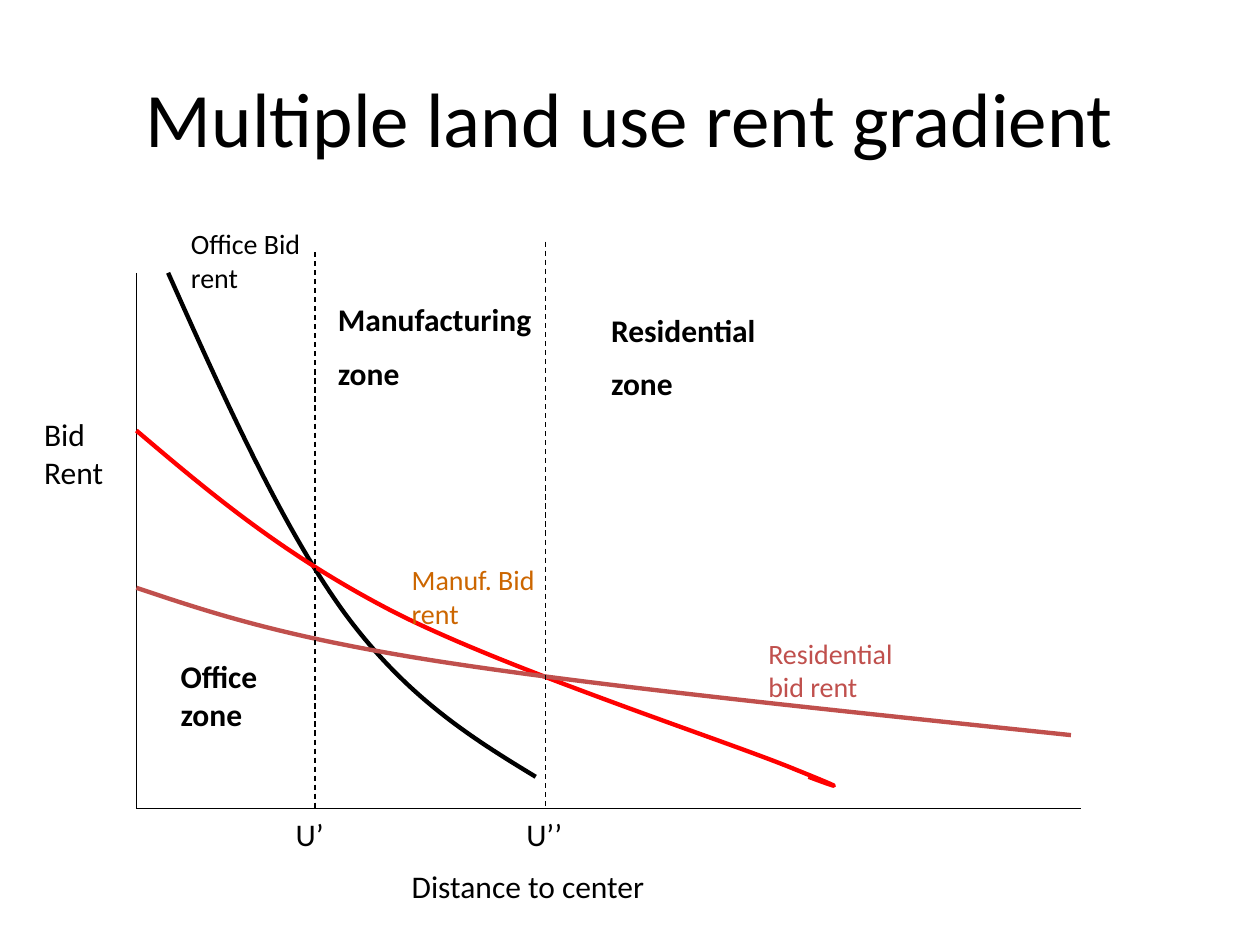
from dataclasses import dataclass

from lxml import etree
from pptx import Presentation
from pptx.dml.color import RGBColor as RGB
from pptx.enum.dml import MSO_LINE_DASH_STYLE as Dash
from pptx.enum.shapes import MSO_CONNECTOR as Connector
from pptx.enum.text import MSO_ANCHOR as Anchor, MSO_AUTO_SIZE as AutoSize, PP_ALIGN as Align
from pptx.oxml.ns import qn
from pptx.util import Cm, Pt


@dataclass(frozen=True)
class Theme:
    font: str = "Calibri"
    ink: RGB = RGB(0x00, 0x00, 0x00)
    manuf_curve: RGB = RGB(0xFF, 0x00, 0x00)
    manuf_label: RGB = RGB(0xCC, 0x66, 0x00)
    residential: RGB = RGB(0xC0, 0x50, 0x4D)
    title: int = 44
    body: int = 18
    label: int = 16
    thin: float = 0.75
    thick: float = 2.5


class SlideBuilder:
    def __init__(self, slide, theme):
        self.s = slide
        self.theme = theme

    def text(self, box, lines, size=None, color=None, bold=False,
             align=Align.LEFT, anchor=Anchor.TOP, fit=AutoSize.SHAPE_TO_FIT_TEXT):
        size = size or self.theme.body
        tf = self.s.shapes.add_textbox(*map(Cm, box)).text_frame
        tf.word_wrap = True
        tf.auto_size = fit
        tf.vertical_anchor = anchor
        for i, line in enumerate(lines):
            p = tf.add_paragraph() if i else tf.paragraphs[0]
            p.text = line
            p.alignment = align
            if i:
                p.space_before = Pt(size / 2)
            p.font.name = self.theme.font
            p.font.size = Pt(size)
            p.font.bold = bold
            p.font.color.rgb = color or self.theme.ink

    def line(self, x1, y1, x2, y2, dash=None):
        ln = self.s.shapes.add_connector(Connector.STRAIGHT, *map(Cm, (x1, y1, x2, y2)))
        ln.line.color.rgb = self.theme.ink
        ln.line.width = Pt(self.theme.thin)
        if dash:
            ln.line.dash_style = dash
        etree.SubElement(ln._element.spPr, qn("a:effectLst"))

    def curve(self, knots, color):
        """Draw chained cubic curves: a start, then two controls and an end for each."""
        start, *rest = [(Cm(x), Cm(y)) for x, y in knots]
        fb = self.s.shapes.build_freeform(*start)
        fb.add_line_segments(rest, close=False)
        sp = fb.convert_to_shape()
        sp.shadow.inherit = False
        sp.fill.background()
        sp.line.color.rgb = color
        sp.line.width = Pt(self.theme.thick)

        # Each three straight segments become one cubic segment
        outline = next(sp._element.iter(qn("a:path")))
        segments = outline.findall(qn("a:lnTo"))
        for i in range(0, len(segments), 3):
            cubic = etree.SubElement(outline, qn("a:cubicBezTo"))
            for segment in segments[i:i + 3]:
                cubic.append(segment[0])
                outline.remove(segment)


AXIS_X, AXIS_TOP, AXIS_Y, AXIS_END = 2.75, 5.5, 16.3, 21.8

OFFICE = [(10.8, 15.66), (9.48, 14.86), (8.18, 14.04), (6.94, 12.35),
          (5.71, 10.66), (4.54, 8.08), (3.39, 5.5)]
MANUFACTURING = [(16.3, 15.66), (16.8, 15.85), (17.3, 16.02), (15.88, 15.45),
                 (14.46, 14.88), (10.01, 13.42), (7.83, 12.28),
                 (5.65, 11.14), (4.2, 9.91), (AXIS_X, 8.68)]
RESIDENTIAL = [(21.59, 14.82), (16.82, 14.32), (12.05, 13.83), (8.89, 13.34),
               (5.73, 12.85), (4.24, 12.35), (AXIS_X, 11.85)]

# x, top and name of each zone boundary
BOUNDARIES = [(6.35, 5.08, "U’"), (11, 4.87, "U’’")]

ZONES = [
    ((3.39, 13.12, 2.54, 1.78), ["Office zone"]),
    ((6.56, 5.93, 4.87, 2.16), ["Manufacturing", "zone"]),
    ((12.07, 6.14, 4.45, 2.16), ["Residential", "zone"]),
]


def main():
    prs = Presentation()
    prs.slide_width, prs.slide_height = Cm(25.4), Cm(19.05)
    theme = Theme()
    b = SlideBuilder(prs.slides.add_slide(prs.slide_layouts[6]), theme)

    b.text((1.27, 0.76, 22.86, 3.18), ["Multiple land use rent gradient"],
           size=theme.title, align=Align.CENTER, anchor=Anchor.MIDDLE, fit=AutoSize.NONE)

    b.line(AXIS_X, AXIS_TOP, AXIS_X, AXIS_Y)
    b.line(AXIS_X, AXIS_Y, AXIS_END, AXIS_Y)

    b.curve(OFFICE, theme.ink)
    b.curve(MANUFACTURING, theme.manuf_curve)
    b.curve(RESIDENTIAL, theme.residential)

    for x, top, name in BOUNDARIES:
        b.line(x, top, x, AXIS_Y, Dash.DASH)
        b.text((x - 0.64, AXIS_Y, 1.9, 1.27), [name])

    for box, lines in ZONES:
        b.text(box, lines, bold=True)

    b.text((8.05, 17.36, 8.05, 1.02), ["Distance to center"])
    b.text((0.64, 8.25, 2.33, 2.29), ["Bid Rent"])

    for x, y, label, color in [
        (3.6, 4.45, "Office Bid rent", theme.ink),
        (8.05, 11.22, "Manuf. Bid rent", theme.manuf_label),
        (15.24, 12.7, "Residential bid rent", theme.residential),
    ]:
        b.text((x, y, 3.18, 1.63), [label], size=theme.label, color=color)

    prs.save("out.pptx")


if __name__ == "__main__":
    main()
